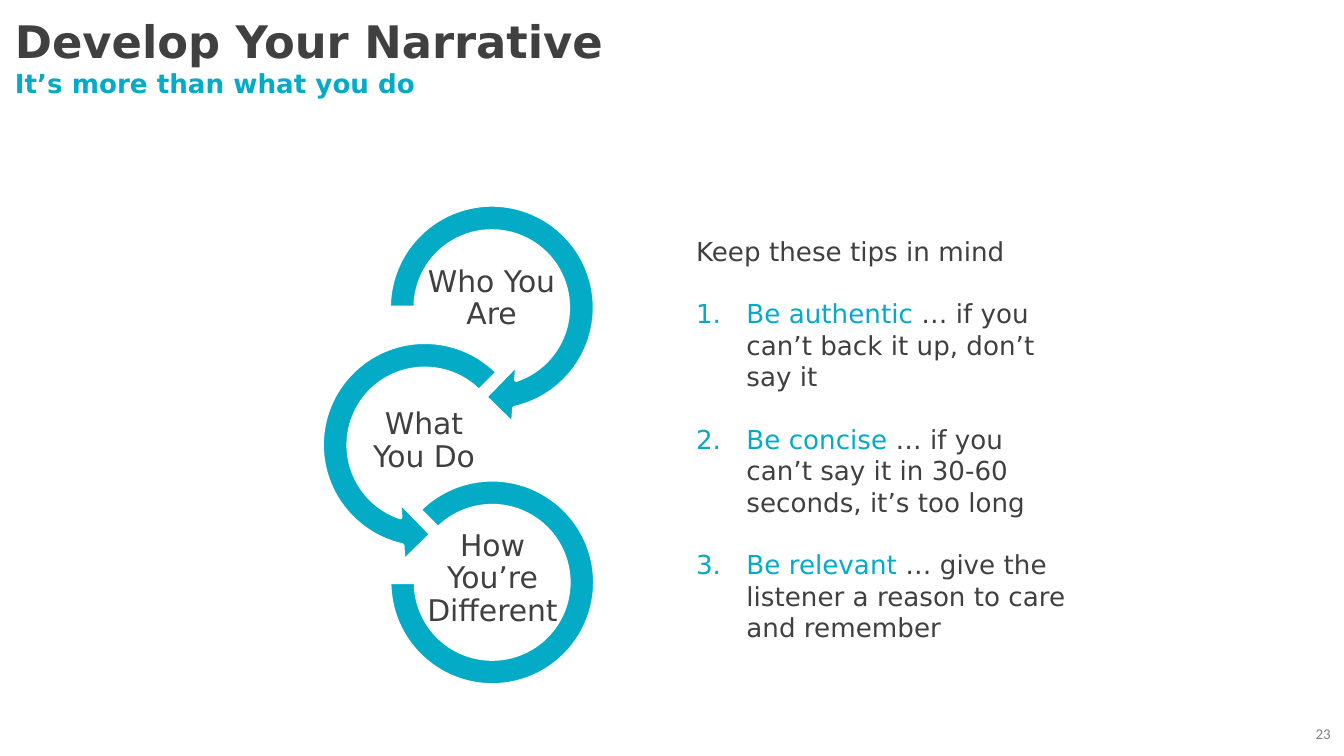
from dataclasses import dataclass

from lxml.etree import SubElement
from pptx import Presentation
from pptx.dml.color import RGBColor
from pptx.enum.shapes import MSO_SHAPE as Shape
from pptx.enum.text import MSO_ANCHOR as Anchor, MSO_AUTO_SIZE as AutoSize, PP_ALIGN as Align
from pptx.oxml.ns import qn
from pptx.slide import Slide
from pptx.util import Pt


def color(value):
    """Turn a hex string into a colour."""
    return RGBColor.from_string(value)


def assign(target, formats):
    """Set each format value on the target."""
    for name, value in formats.items():
        setattr(target, name, value)


@dataclass
class Deck:
    """Hold the style and the slide being filled."""
    slide: Slide
    font: str = "DejaVu Sans"
    ink: str = "404040"
    accent: str = "03ABC6"
    paper: str = "FFFFFF"

    def add_words(self, paragraph, wording, size, ink=None, font=None, bold=False):
        """Add one formatted run."""
        run = paragraph.add_run()
        run.text = wording
        assign(run.font, {"size": Pt(size), "name": font or self.font, "bold": bold})
        run.font.color.rgb = color(ink or self.ink)

    def frame(self, holder, inset=None, **formats):
        """Format the text frame of a shape."""
        body = holder.text_frame
        margins = dict(zip(("margin_left", "margin_top", "margin_right", "margin_bottom"),
                           map(Pt, inset or ())))
        assign(body, {"word_wrap": True, **margins, **formats})
        return body

    def text(self, box, inset=None, **formats):
        """Add a wrapping text box and return its frame."""
        return self.frame(self.slide.shapes.add_textbox(*map(Pt, box)), inset, **formats)

    def title(self, box, heading, subtitle):
        """Place the title with a subtitle line below it."""
        holder = self.slide.shapes.title
        assign(holder, dict(zip(("left", "top", "width", "height"), map(Pt, box))))
        body = self.frame(holder, (5, 3, 5, 3), vertical_anchor=Anchor.TOP, auto_size=AutoSize.NONE)
        lines = body.paragraphs[0], body.add_paragraph()
        for line, wording, size, ink in zip(lines, (heading, subtitle), (24, 14), (self.ink, self.accent)):
            line.alignment = Align.LEFT
            self.add_words(line, wording, size, ink, bold=True)

    def ring(self, kind, box, adjustments, label, label_box):
        """Add a ring segment with its label inside."""
        ring = self.slide.shapes.add_shape(kind, *map(Pt, box))
        ring.shadow.inherit = False
        for index, value in enumerate(adjustments):
            ring.adjustments[index] = value
        ring.fill.solid()
        ring.fill.fore_color.rgb = color(self.accent)
        ring.line.color.rgb = color(self.paper)
        ring.line.width = Pt(2)
        caption = self.text(label_box, (0.8,) * 4, vertical_anchor=Anchor.MIDDLE).paragraphs[0]
        assign(caption, {"alignment": Align.CENTER, "line_spacing": 0.9})
        self.add_words(caption, label, 16)

    def tips(self, box, intro, tips):
        """Add an introduction and a numbered list of tips."""
        body = self.text(box, auto_size=AutoSize.SHAPE_TO_FIT_TEXT)
        self.add_words(body.paragraphs[0], intro, 14)
        for advice, reason in tips:
            tip = body.add_paragraph()
            tip.space_before = Pt(16.8)
            properties = tip._p.get_or_add_pPr()
            properties.set("marL", str(Pt(27)))
            properties.set("indent", str(Pt(-27)))
            SubElement(properties, qn("a:buAutoNum"), type="arabicPeriod")
            self.add_words(tip, advice, 14, self.accent)
            self.add_words(tip, reason, 14)

    def page_number(self, box, number):
        """Add the page number."""
        page = self.text(box, vertical_anchor=Anchor.MIDDLE).paragraphs[0]
        page.alignment = Align.RIGHT
        self.add_words(page, number, 8, "808080", "Calibri")


def main():
    """Build the narrative slide."""
    presentation = Presentation()
    assign(presentation, {"slide_width": Pt(720), "slide_height": Pt(405)})
    deck = Deck(presentation.slides.add_slide(presentation.slide_layouts[5]))
    deck.title((3, 4.3, 486, 67.7), "Develop Your Narrative", "It’s more than what you do")
    rings = [
        (Shape.CIRCULAR_ARROW, (199.5, 100.8, 128, 128), (0.11, 11.42, 45, 108, 0.125),
         "Who You Are", (227.7, 142.3, 71.3, 36)),
        (Shape.LEFT_CIRCULAR_ARROW, (163.6, 174.4, 128, 128), (0.11, 11.42, 63, 189, 0.125),
         "What You Do", (197.3, 208.8, 59.8, 55.4)),
        (Shape.BLOCK_ARC, (208.7, 257, 110, 110), (135, 108, 0.127),
         "How You’re Different", (220.3, 292.3, 87.1, 36)),
    ]
    for ring in rings:
        deck.ring(*ring)
    deck.tips((365.8, 122.4, 218.2, 244.8), "Keep these tips in mind", [
        ("Be authentic ", "… if you can’t back it up, don’t say it"),
        ("Be concise ", "… if you can’t say it in 30-60 seconds, it’s too long"),
        ("Be relevant ", "… give the listener a reason to care and remember"),
    ])
    deck.page_number((684, 382.3, 36, 21.6), "23")
    presentation.save("out.pptx")


if __name__ == "__main__":
    main()
